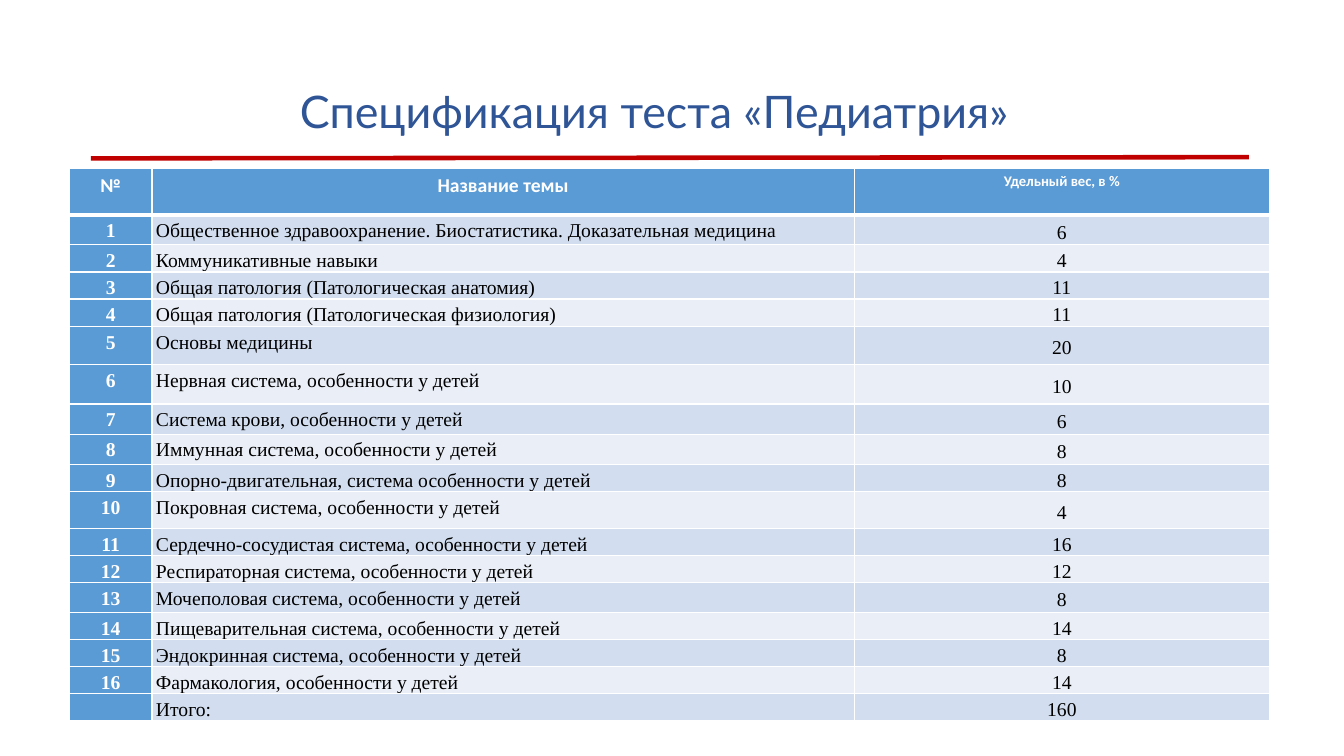
import pptx
import pptx.util
import pptx.dml.color
import pptx.enum.shapes
import pptx.enum.text
import pptx.oxml
import pptx.oxml.ns
import lxml.etree

Cm = pptx.util.Cm
RGBColor = pptx.dml.color.RGBColor
ALIGN = pptx.enum.text.PP_ALIGN
ANCHOR = pptx.enum.text.MSO_ANCHOR
qn = pptx.oxml.ns.qn

WHITE = RGBColor(0xFF, 0xFF, 0xFF)
BLACK = RGBColor(0x00, 0x00, 0x00)
NAVY = RGBColor(0x2F, 0x55, 0x97)
RED = RGBColor(0xC0, 0x00, 0x00)
BLUE = RGBColor(0x5B, 0x9B, 0xD5)
BAND_DARK = RGBColor(0xD2, 0xDE, 0xEF)
BAND_LIGHT = RGBColor(0xEA, 0xEF, 0xF7)


def write(tf, text, size=14, font="Times New Roman", color=BLACK, bold=False,
          align=ALIGN.CENTER, spacing=1.25):
    p = tf.paragraphs[0]
    p.alignment = align
    p.line_spacing = spacing
    if not text:
        p._p.get_or_add_endParaRPr().set("sz", str(size * 100))
        return
    r = p.add_run()
    r.text = text
    r.font.size = pptx.util.Pt(size)
    r.font.name = font
    r.font.bold = bold
    r.font.color.rgb = color


def set_borders(cell, bottom):
    tcPr = cell._tc.get_or_add_tcPr()
    widths = {"a:lnL": 1, "a:lnR": 1, "a:lnT": 1, "a:lnB": bottom}
    for i, (tag, width) in enumerate(widths.items()):
        ln = lxml.etree.Element(qn(tag), w=str(pptx.util.Pt(width)))
        fill = lxml.etree.SubElement(ln, qn("a:solidFill"))
        lxml.etree.SubElement(fill, qn("a:srgbClr"), val=str(WHITE))
        tcPr.insert(i, ln)


prs = pptx.Presentation()
prs.slide_width = Cm(33.87)
prs.slide_height = Cm(19.05)
s = prs.slides.add_slide(prs.slide_layouts[5])
for ph in list(s.placeholders):
    if ph.placeholder_format.idx != 0:
        ph._element.getparent().remove(ph._element)

title = s.shapes.title
title.left, title.top = Cm(1.47), Cm(1.02)
title.width, title.height = Cm(30.05), Cm(3.68)
title.text_frame.vertical_anchor = ANCHOR.MIDDLE
write(title.text_frame, "Спецификация теста «Педиатрия»", size=32, font="Lato",
      color=NAVY, spacing=0.9)

rule = s.shapes.add_connector(pptx.enum.shapes.MSO_CONNECTOR.STRAIGHT,
                              Cm(2.29), Cm(3.99), Cm(31.47), Cm(3.96))
rule.line.color.rgb = RED
rule.line.width = pptx.util.Pt(3.25)
lxml.etree.SubElement(rule._element.spPr, qn("a:effectLst"))

topics = [
    ("Общественное здравоохранение. Биостатистика. Доказательная медицина", 6, 0.76),
    ("Коммуникативные навыки", 4, 0.53),
    ("Общая патология (Патологическая анатомия)", 11, 0.58),
    ("Общая патология (Патологическая физиология)", 11, 0.58),
    ("Основы медицины", 20, 0.97),
    ("Нервная система, особенности у детей", 10, 0.99),
    ("Система крови, особенности у детей", 6, 0.76),
    ("Иммунная система, особенности у детей", 8, 0.76),
    ("Опорно-двигательная, система особенности у детей", 8, 0.58),
    ("Покровная система, особенности у детей", 4, 0.94),
    ("Сердечно-сосудистая система, особенности у детей", 16, 0.58),
    ("Респираторная система, особенности у детей", 12, 0.58),
    ("Мочеполовая система, особенности у детей", 8, 0.74),
    ("Пищеварительная система, особенности у детей", 14, 0.58),
    ("Эндокринная система, особенности у детей", 8, 0.58),
    ("Фармакология, особенности у детей", 14, 0.58),
    ("Итого:", 160, 0.66),
]
justified = {1, 2, 8, 9, 14, 15, 16, 17}
centred = {1, *range(5, 14)}

table = s.shapes.add_table(len(topics) + 1, 3, Cm(1.75), Cm(4.24), Cm(30.24), Cm(12.95)).table
table.first_col = True
for col, width in zip(table.columns, (2.08, 17.7, 10.46)):
    col.width = Cm(width)

table.rows[0].height = Cm(1.17)
headings = [("№", 14), ("Название темы", 14), ("Удельный вес, в %", 10.5)]
for c, (text, size) in enumerate(headings):
    write(table.cell(0, c).text_frame, text, size=size, font="Calibri", color=WHITE, bold=True)

for n, (topic, weight, height) in enumerate(topics, 1):
    table.rows[n].height = Cm(height)
    number = str(n) if n < len(topics) else ""
    write(table.cell(n, 0).text_frame, number, color=WHITE, bold=True)
    write(table.cell(n, 1).text_frame, topic,
          align=ALIGN.JUSTIFY if n in justified else ALIGN.LEFT)
    write(table.cell(n, 2).text_frame, str(weight))
    if n in centred:
        table.cell(n, 2).vertical_anchor = ANCHOR.MIDDLE

for n, row in enumerate(table.rows):
    for c, cell in enumerate(row.cells):
        cell.margin_left = cell.margin_right = Cm(0.1)
        cell.margin_top = cell.margin_bottom = 0
        cell.fill.solid()
        band = BAND_DARK if n % 2 else BAND_LIGHT
        cell.fill.fore_color.rgb = BLUE if n == 0 or c == 0 else band
        set_borders(cell, bottom=1 if n else 3)

prs.save("out.pptx")
